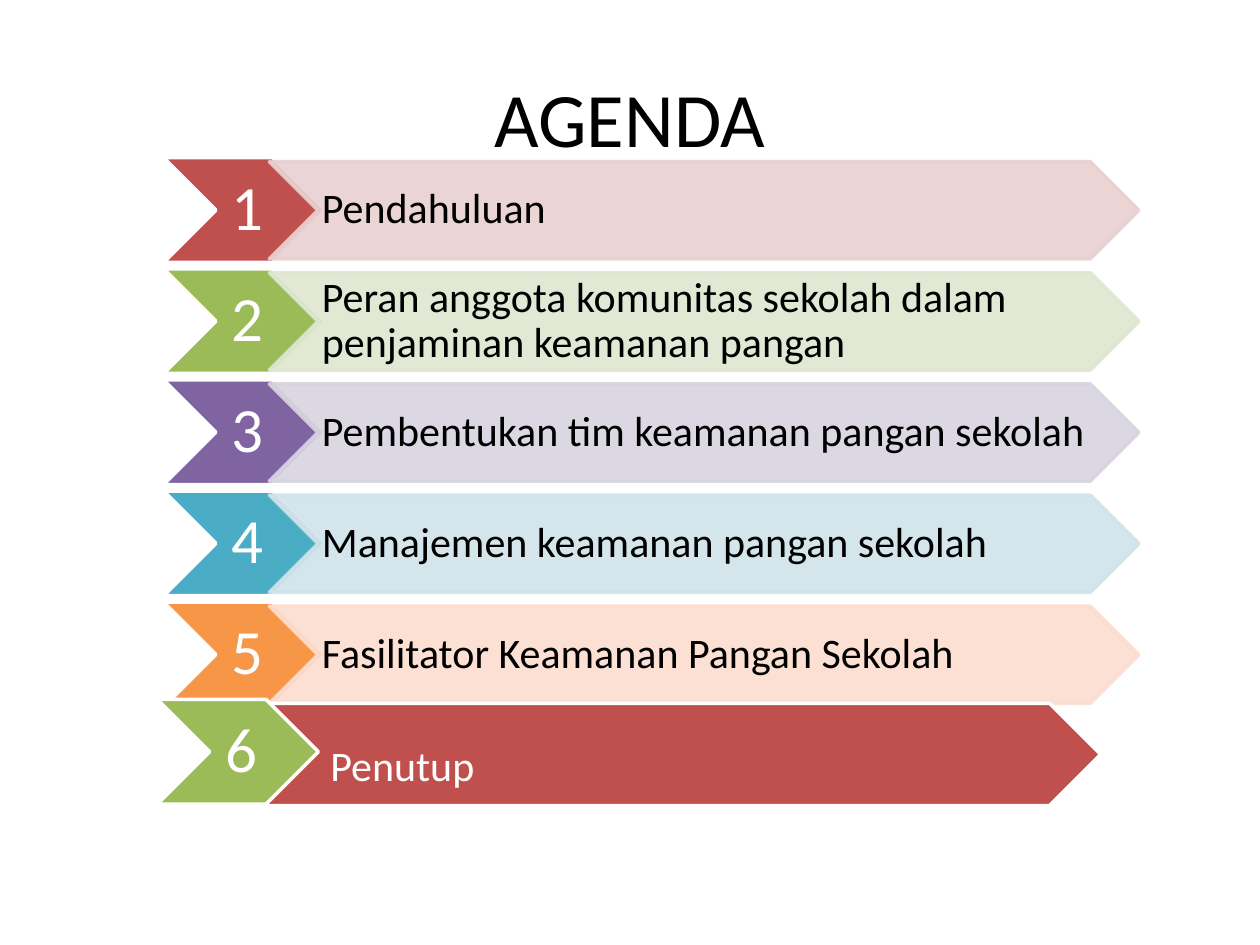
from lxml.etree import SubElement
from pptx import Presentation
from pptx.dml.color import RGBColor
from pptx.enum.shapes import MSO_SHAPE as Shape
from pptx.enum.text import MSO_ANCHOR as Anchor, PP_ALIGN as Align
from pptx.oxml.ns import qn
from pptx.util import Cm, Pt

COLORS = {
    "black": "000000", "white": "FFFFFF",
    "red": "C0504D", "green": "9BBB59", "purple": "8064A2",
    "teal": "4BACC6", "orange": "F79646",
    "pale red": "E8D0D0", "pale green": "DEE7D1", "pale purple": "D8D3E0",
    "pale teal": "D0E3EA", "pale orange": "FCDDCF",
}
AGENDA = [
    ("Pendahuluan", "red"),
    ("Peran anggota komunitas sekolah dalam penjaminan keamanan pangan", "green"),
    ("Pembentukan tim keamanan pangan sekolah", "purple"),
    ("Manajemen keamanan pangan sekolah", "teal"),
    ("Fasilitator Keamanan Pangan Sekolah", "orange"),
]
ROW_PITCH = 2.24
NUMBER_SIZE = (3.25, 2.11)
TITLE_STYLE = {"size": 44, "align": Align.CENTER, "spacing": 1,
               "insets": (0.25, 0.13, 0.25, 0.13)}
NUMBER_STYLE = {"size": 36, "color": "white", "align": Align.CENTER,
                "insets": (0.13, 0.08, 0, 0.08)}
LABEL_STYLE = {"size": 24, "insets": (0.08, 0.05, 0, 0.05)}
CLOSING_STYLE = {"size": 24, "color": "white", "insets": (2.03, 0.64, 0, 0.08)}


def rgb(color):
    return RGBColor.from_string(COLORS[color])


def lengths(box):
    return [Cm(value) for value in box]


def add_text(slide, box, text, size, insets, color="black",
             align=Align.LEFT, spacing=0.9):
    frame = slide.shapes.add_textbox(*lengths(box)).text_frame
    left, top, right, bottom = lengths(insets)
    frame_format = {"word_wrap": True, "vertical_anchor": Anchor.MIDDLE,
                    "margin_left": left, "margin_top": top,
                    "margin_right": right, "margin_bottom": bottom}
    paragraph = frame.paragraphs[0]
    paragraph.text = text
    formats = (
        (frame, frame_format),
        (paragraph, {"alignment": align, "line_spacing": spacing}),
        (paragraph.runs[0].font, {"name": "Calibri", "size": Pt(size)}),
    )
    for target, values in formats:
        for attribute, value in values.items():
            setattr(target, attribute, value)
    paragraph.runs[0].font.color.rgb = rgb(color)


def add_chevron(slide, box, fill, line, opacity=100):
    chevron = slide.shapes.add_shape(Shape.CHEVRON, *lengths(box))
    chevron.shadow.inherit = False
    chevron.fill.solid()
    chevron.fill.fore_color.rgb = rgb(fill)
    chevron.line.color.rgb = rgb(line)
    chevron.line.width = Pt(2)
    if opacity < 100:
        for color in chevron._element.spPr.iter(qn("a:srgbClr")):
            SubElement(color, qn("a:alpha"), val=str(opacity * 1000))


def add_labelled_chevron(slide, box, text, style, **look):
    """Draw a chevron with its text between the notch and the point."""
    left, top, width, height = box
    add_chevron(slide, box, **look)
    add_text(slide, (left + height / 2, top, width - height, height), text, **style)


def add_number(slide, left, top, number, color):
    add_labelled_chevron(slide, (left, top, *NUMBER_SIZE), str(number),
                         NUMBER_STYLE, fill=color, line="white")


def add_agenda_row(slide, left, top, number, label, color):
    pale = f"pale {color}"
    add_number(slide, left, top, number, color)
    add_labelled_chevron(slide, (left + 2.13, top + 0.08, 17.53, 1.96), label,
                         LABEL_STYLE, fill=pale, line=pale, opacity=90)


def add_closing_row(slide, left, top, number, label):
    """Draw the last row, whose number lies over a full-length bar."""
    add_labelled_chevron(slide, (left + 0.43, top + 0.08, 18.59, 2.06), label,
                         CLOSING_STYLE, fill="red", line="white")
    add_number(slide, left, top, number, "green")


def add_agenda(slide, left, top):
    for index, (label, color) in enumerate(AGENDA):
        add_agenda_row(slide, left, top + index * ROW_PITCH, index + 1, label, color)
    add_closing_row(slide, left - 0.13, top + 10.92, len(AGENDA) + 1, "Penutup")


def main():
    deck = Presentation()
    deck.slide_width, deck.slide_height = Cm(25.4), Cm(19.05)
    slide = deck.slides.add_slide(deck.slide_layouts[6])
    add_text(slide, (1.27, 0.76, 22.86, 3.18), "AGENDA", **TITLE_STYLE)
    add_agenda(slide, left=3.3, top=3.18)
    deck.save("out.pptx")


if __name__ == "__main__":
    main()
